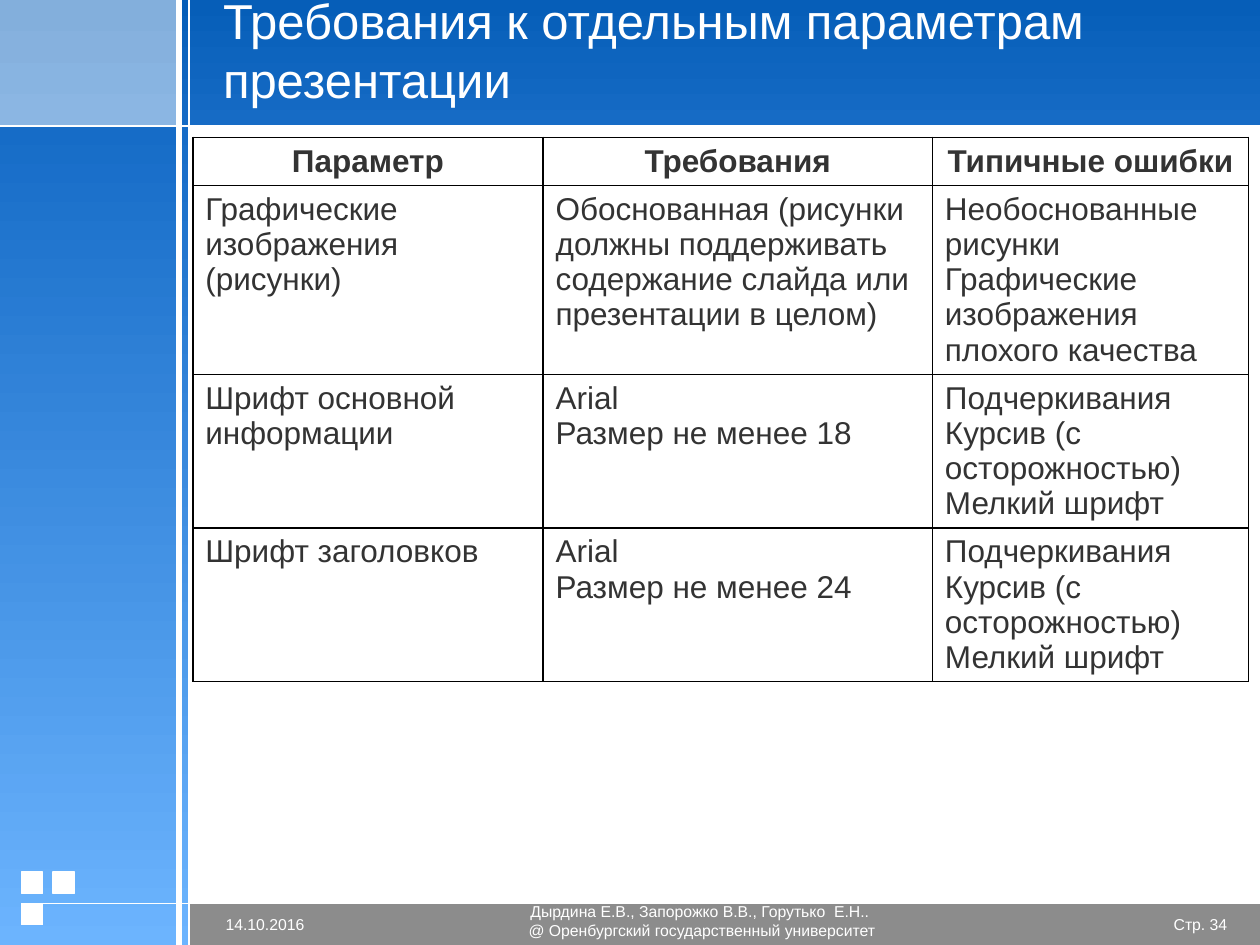
from typing import NamedTuple

from lxml.etree import SubElement
from pptx import Presentation
from pptx.dml.color import RGBColor
from pptx.enum.shapes import MSO_CONNECTOR as Connector, MSO_SHAPE as Shape
from pptx.enum.text import MSO_ANCHOR as Anchor, PP_ALIGN as Align
from pptx.oxml import parse_xml
from pptx.oxml.ns import nsdecls, qn
from pptx.util import Inches, Pt

FONT = "Arial"
WHITE, TEXT, BORDER = "FFFFFF", "333333", "000000"


class Panel(NamedTuple):
    left: float
    top: float
    width: float
    height: float
    colors: tuple[str, ...]  # two colours make a vertical gradient


class Rule(NamedTuple):
    start: tuple[float, float]
    end: tuple[float, float]
    points: float


class Note(NamedTuple):
    left: float
    top: float
    width: float
    height: float
    align: Align
    text: str


PANELS = [
    Panel(1.5, 1, 8.5, 6.17, (WHITE,)),
    Panel(1.5, 7.17, 8.5, 0.33, ("8C8C8C",)),
    Panel(0, 0, 1.5, 1, ("83AFDC", "8BB6E3")),
    Panel(0, 1, 1.5, 6.5, ("166CC7", "6CB4FE")),
    Panel(1.42, 0, 8.58, 1, ("065EB8", "166BC5")),
]
SQUARES = [(0.17, 7.17), (0.17, 6.92), (0.42, 6.92)]
RULES = [
    Rule((1.5, 0), (1.5, 7.5), 1),
    Rule((1.42, 0), (1.42, 7.5), 3),
    Rule((10, 1), (0, 1), 1),
    Rule((10, 7.17), (0.17, 7.17), 1),
]
NOTES = [
    Note(9.17, 7.25, 0.57, 0.17, Align.RIGHT, "Стр. 34"),
    Note(1.79, 7.25, 1.21, 0.17, Align.LEFT, "14.10.2016"),
    Note(2.72, 7, 5.7, 0.61, Align.CENTER,
         "Дырдина Е.В., Запорожко В.В., Горутько  Е.Н.. \n"
         "@ Оренбургский государственный университет"),
]
FONT_ERRORS = "Подчеркивания\nКурсив (с осторожностью)\nМелкий шрифт"
ROWS = [
    ("Параметр", "Требования", "Типичные ошибки"),
    ("Графические изображения\n(рисунки)",
     "Обоснованная (рисунки должны поддерживать содержание слайда "
     "или презентации в целом)",
     "Необоснованные рисунки\nГрафические изображения плохого качества"),
    ("Шрифт основной информации", "Arial\nРазмер не менее 18", FONT_ERRORS),
    ("Шрифт заголовков", "Arial\nРазмер не менее 24", FONT_ERRORS),
]
COLUMN_WIDTHS = [2.78, 3.09, 2.51]
ROW_HEIGHTS = [0.38, 1.5, 1.22, 1.22]


def rgb(color: str) -> RGBColor:
    return RGBColor.from_string(color)


def set_text(frame, text: str, size: float, color: str,
             align: Align = Align.LEFT, bold: bool = False) -> None:
    frame.text = text
    frame.word_wrap = True
    for para in frame.paragraphs:
        para.alignment = align
        for span in para.runs:
            span.font.name, span.font.size = FONT, Pt(size)
            span.font.bold = bold
            span.font.color.rgb = rgb(color)


def add_panel(page, panel: Panel):
    box = page.shapes.add_shape(Shape.RECTANGLE, *map(Inches, panel[:4]))
    box.shadow.inherit = False
    box.line.fill.background()
    if len(panel.colors) == 1:
        box.fill.solid()
        box.fill.fore_color.rgb = rgb(panel.colors[0])
    else:
        box.fill.gradient()
        box.fill.gradient_angle = 270
        for stop, color in zip(box.fill.gradient_stops, panel.colors):
            stop.color.rgb = rgb(color)
    return box


def add_square(page, left: float, top: float) -> None:
    box = add_panel(page, Panel(left, top, 0.17, 0.17, (WHITE,)))
    box.line.color.rgb = rgb(WHITE)
    box.line.width = Pt(0.75)


def add_rule(page, rule: Rule) -> None:
    line = page.shapes.add_connector(
        Connector.STRAIGHT, *map(Inches, rule.start + rule.end))
    line.line.color.rgb = rgb(WHITE)
    line.line.width = Pt(rule.points)
    SubElement(line._element.spPr, qn("a:effectLst"))


def add_note(page, note: Note) -> None:
    frame = page.shapes.add_textbox(*map(Inches, note[:4])).text_frame
    frame.margin_left = frame.margin_right = 0
    frame.margin_top = frame.margin_bottom = 0
    frame.vertical_anchor = Anchor.MIDDLE
    set_text(frame, note.text, 9, WHITE, note.align)


def set_borders(cell) -> None:
    properties = cell._tc.get_or_add_tcPr()
    for index, side in enumerate("LRTB"):
        properties.insert(index, parse_xml(
            f'<a:ln{side} {nsdecls("a")} w="{Pt(1)}"><a:solidFill>'
            f'<a:srgbClr val="{BORDER}"/></a:solidFill></a:ln{side}>'))


def add_requirements(page) -> None:
    table = page.shapes.add_table(
        len(ROWS), len(COLUMN_WIDTHS), Inches(1.53), Inches(1.09),
        Inches(sum(COLUMN_WIDTHS)), Inches(sum(ROW_HEIGHTS))).table
    table.horz_banding = False
    for column, width in zip(table.columns, COLUMN_WIDTHS):
        column.width = Inches(width)
    for row, height, texts in zip(table.rows, ROW_HEIGHTS, ROWS):
        row.height = Inches(height)
        header = texts is ROWS[0]
        for cell, text in zip(row.cells, texts):
            cell.fill.background()
            set_borders(cell)
            set_text(cell.text_frame, text, 18, TEXT,
                     Align.CENTER if header else Align.LEFT, header)


def add_title(page, text: str) -> None:
    title = page.shapes.title
    title.left, title.top = Inches(1.67), Inches(0.08)
    title.width, title.height = Inches(8.17), Inches(0.83)
    title.text_frame.vertical_anchor = Anchor.BOTTOM
    set_text(title.text_frame, text, 28, WHITE)
    # Bring the title in front of the header band
    page.shapes._spTree.append(title._element)


def main() -> None:
    deck = Presentation()
    deck.slide_width, deck.slide_height = Inches(10), Inches(7.5)
    page = deck.slides.add_slide(deck.slide_layouts[5])
    page.background.fill.solid()
    page.background.fill.fore_color.rgb = rgb("BDE0FF")

    # Backdrop
    for panel in PANELS:
        add_panel(page, panel)
    for left, top in SQUARES:
        add_square(page, left, top)
    for rule in RULES:
        add_rule(page, rule)

    # Footer, title and table
    for note in NOTES:
        add_note(page, note)
    add_title(page, "Требования к отдельным параметрам презентации")
    add_requirements(page)
    deck.save("out.pptx")


if __name__ == "__main__":
    main()
